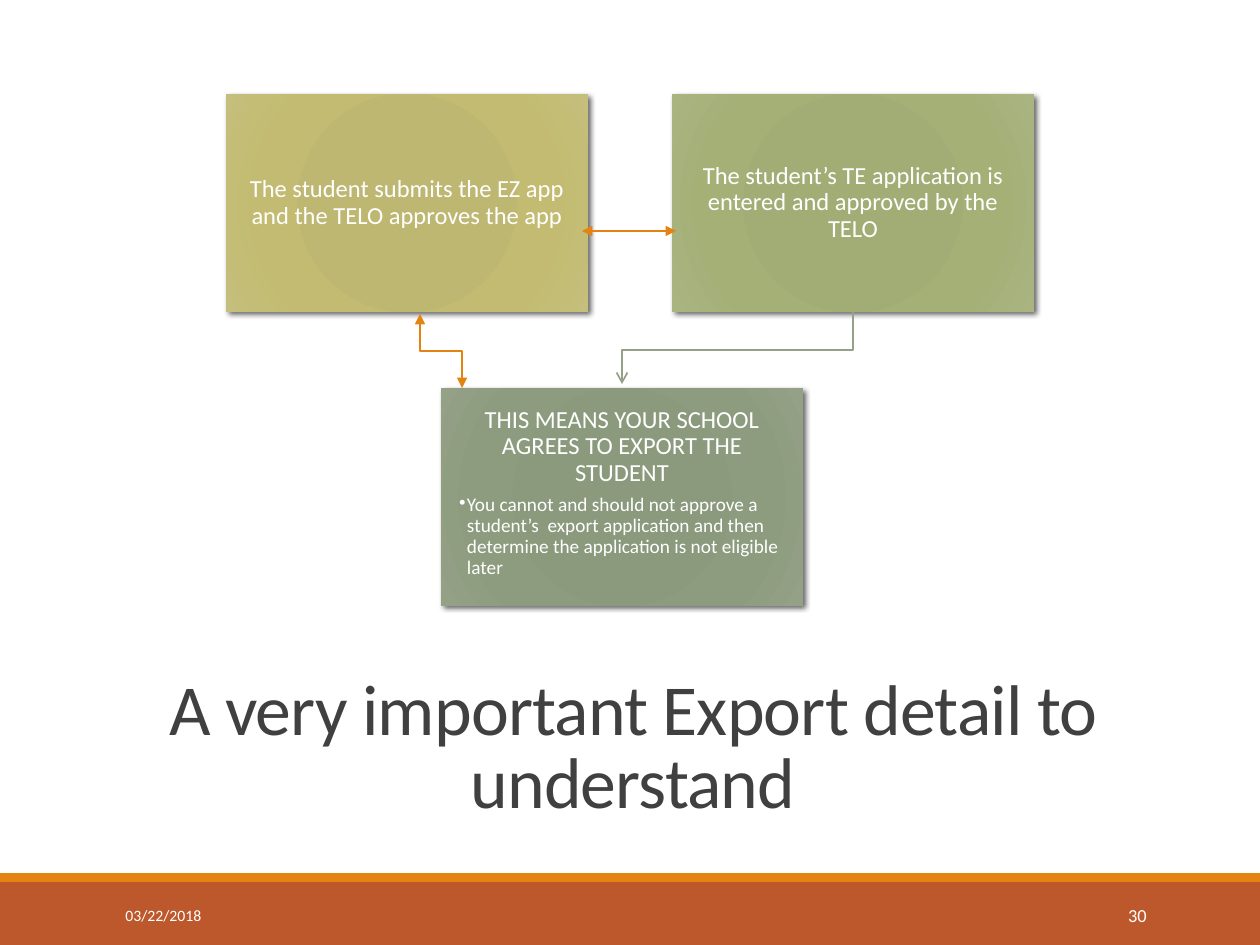
from lxml.etree import SubElement
from pptx import Presentation
from pptx.dml.color import RGBColor
from pptx.enum.shapes import MSO_CONNECTOR, MSO_SHAPE
from pptx.enum.text import MSO_ANCHOR, PP_ALIGN
from pptx.oxml import parse_xml
from pptx.oxml.ns import nsdecls, qn
from pptx.util import Emu, Pt

PX = 914400 / 126
WHITE = RGBColor(0xFF, 0xFF, 0xFF)
CHARCOAL = RGBColor(0x40, 0x40, 0x40)
ORANGE = RGBColor(0xE4, 0x83, 0x12)
RUST = RGBColor(0xBD, 0x58, 0x2C)
SAGE = RGBColor(0x94, 0xA0, 0x88)


def px(*lengths):
    return [Emu(round(length * PX)) for length in lengths]


def write(frame, text, size, color=WHITE, align=PP_ALIGN.LEFT, anchor=MSO_ANCHOR.MIDDLE,
          spacing=1.0, after=0, tracking=0, bullet=False, first=True):
    frame.word_wrap = True
    frame.vertical_anchor = anchor
    paragraph = frame.paragraphs[0] if first else frame.add_paragraph()
    paragraph.alignment = align
    paragraph.line_spacing = spacing
    paragraph.space_after = Pt(after)
    if bullet:
        paragraph.level = 1
        properties = paragraph._p.get_or_add_pPr()
        indent = px(8)[0]
        properties.set("marL", str(indent))
        properties.set("indent", str(-indent))
        SubElement(properties, qn("a:buChar")).set("char", "•")
    run = paragraph.add_run()
    run.text = text
    run.font.name = "Calibri"
    run.font.size = Pt(size)
    run.font.color.rgb = color
    if tracking:
        run.font._element.set("spc", str(tracking))


deck = Presentation()
deck.slide_width, deck.slide_height = px(1260, 945)
slide = deck.slides.add_slide(deck.slide_layouts[6])
shapes = slide.shapes

# Footer bands
for top, height, color in [(882, 63, RUST), (873, 9, ORANGE)]:
    band = shapes.add_shape(MSO_SHAPE.RECTANGLE, *px(0, top, 1260, height))
    band.shadow.inherit = False
    band.fill.solid()
    band.fill.fore_color.rgb = color
    band.line.fill.background()

# Title
title = shapes.add_textbox(*px(113, 668, 1040, 164))
write(title.text_frame, "A very important Export detail to understand", 41, CHARCOAL,
      PP_ALIGN.CENTER, spacing=0.85, tracking=-50)

# Step cards: radial gradient, soft shadow, heading and optional bullet
CARD_WIDTH, CARD_HEIGHT = 362, 218
STOPS = [0, 34, 70, 100]
cards = [
    (226, 94, ["BEB76E", "BEB771", "C3BB71", "C5BF7D"],
     "The student submits the EZ app and the TELO approves the app", None),
    (672, 94, ["A1AC74", "A2AD76", "A5B077", "AAB481"],
     "The student’s TE application is entered and approved by the TELO", None),
    (441, 388, ["8A987B", "8B997D", "8D9C7E", "94A187"],
     "THIS MEANS YOUR SCHOOL AGREES TO EXPORT THE STUDENT",
     "You cannot and should not approve a student’s  export application and then "
     "determine the application is not eligible later"),
]
for left, top, colors, heading, detail in cards:
    card = shapes.add_shape(MSO_SHAPE.RECTANGLE, *px(left, top, CARD_WIDTH, CARD_HEIGHT))
    card.shadow.inherit = False
    card.line.fill.background()
    stops = "".join(f'<a:gs pos="{stop * 1000}"><a:srgbClr val="{color}"/></a:gs>'
                    for stop, color in zip(STOPS, colors))
    properties = card._element.spPr
    properties.find(qn("a:prstGeom")).addnext(parse_xml(
        f'<a:gradFill {nsdecls("a")} rotWithShape="1"><a:gsLst>{stops}</a:gsLst>'
        '<a:path path="circle"><a:fillToRect l="100000" t="100000" r="100000" b="100000"/>'
        '</a:path></a:gradFill>'))
    properties.find(qn("a:effectLst")).append(parse_xml(
        f'<a:outerShdw {nsdecls("a")} blurRad="{Pt(3)}" dist="{Pt(2)}" dir="2700000" '
        'rotWithShape="0"><a:srgbClr val="000000"><a:alpha val="60000"/></a:srgbClr>'
        '</a:outerShdw>'))
    frame = card.text_frame
    frame.margin_left, frame.margin_right = px(18, 18)
    frame.margin_top, frame.margin_bottom = px(19, 19)
    write(frame, heading, 14, align=PP_ALIGN.CENTER, spacing=0.9, after=5,
          anchor=MSO_ANCHOR.TOP if detail else MSO_ANCHOR.MIDDLE)
    if detail:
        write(frame, detail, 11, anchor=MSO_ANCHOR.TOP, spacing=0.9, after=2,
              bullet=True, first=False)

# Path from the TE application down to the export agreement
route = shapes.build_freeform(853, 312, scale=PX)
route.add_line_segments([(853, 350), (622, 350), (622, 384)], close=False)
agreement_path = route.convert_to_shape()
agreement_path.shadow.inherit = False
agreement_path.fill.background()

# Two-way arrows between the cards
apps_link = shapes.add_connector(MSO_CONNECTOR.STRAIGHT, *px(582, 231, 676, 231))
# The elbow is laid out sideways, then turned so that it leaves vertically
export_link = shapes.add_connector(MSO_CONNECTOR.ELBOW, *px(478, 330, 404, 372))
export_link._element.spPr.find(qn("a:xfrm")).set("rot", "16200000")
for link in (apps_link, export_link):
    SubElement(link._element.spPr, qn("a:effectLst"))

for link, color, head, tail in [(agreement_path, SAGE, None, "arrow"),
                                (apps_link, ORANGE, "triangle", "triangle"),
                                (export_link, ORANGE, "triangle", "triangle")]:
    link.line.color.rgb = color
    link.line.width = Pt(1)
    outline = link._element.spPr.find(qn("a:ln"))
    if head:
        SubElement(outline, qn("a:headEnd")).set("type", head)
    SubElement(outline, qn("a:tailEnd")).set("type", tail)

# Date and slide number
date = shapes.add_textbox(*px(113, 890, 256, 50))
write(date.text_frame, "03/22/2018", 9, after=6)
number = shapes.add_textbox(*px(1023, 890, 136, 50))
write(number.text_frame, "30", 10.5, align=PP_ALIGN.RIGHT, after=6)

deck.save("out.pptx")
